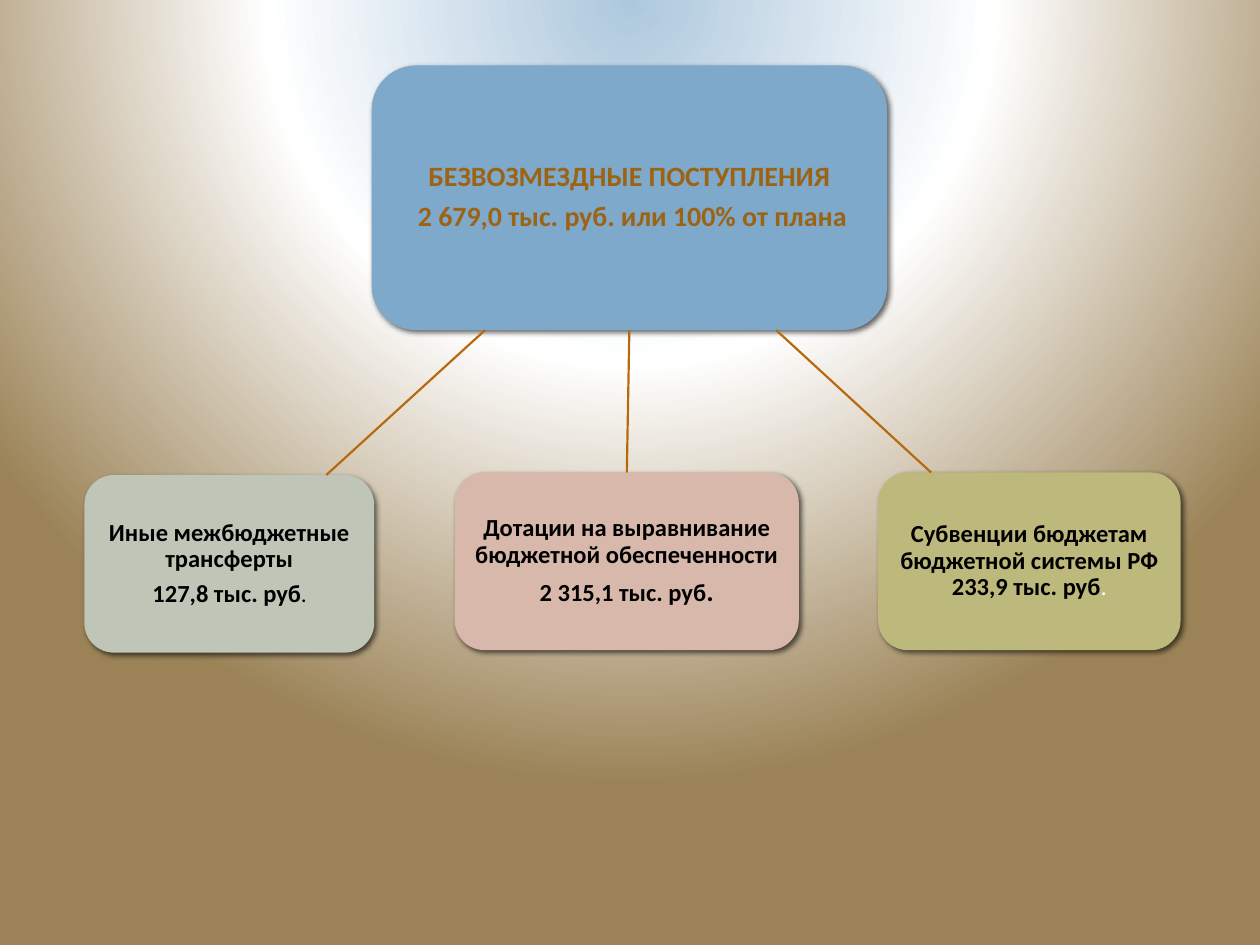
"""Build a slide that splits budget grants into three kinds of transfer."""
from dataclasses import dataclass
from typing import Any, Optional

import pptx
import pptx.dml.color
import pptx.enum.shapes
import pptx.enum.text
import pptx.oxml
import pptx.oxml.ns
import pptx.util
from lxml import etree

Inches = pptx.util.Inches
Pt = pptx.util.Pt
qn = pptx.oxml.ns.qn


@dataclass(frozen=True)
class Theme:
    font: str = "Calibri"
    heading: str = "9D6314"
    ink: str = "000000"
    light: str = "FFFFFF"
    line: str = "B7690E"
    total: str = "7EA9CA"
    transfers: str = "BFC6B8"
    grants: str = "D7B8AB"
    subventions: str = "BDB87B"
    backdrop: tuple = ((0, "ADC8DD"), (46, "FFFFFF"), (100, "9B8357"))
    heading_size: float = 16
    body_size: float = 14
    small_size: float = 10.5
    line_width: float = 1.25


THEME = Theme()


@dataclass(frozen=True)
class Run:
    text: str
    size: float = THEME.body_size
    color: str = THEME.ink
    bold: bool = True


@dataclass(frozen=True)
class Box:
    left: float
    top: float
    width: float
    height: float
    fill: str
    paragraphs: tuple


@dataclass(frozen=True)
class Branch:
    box: Box
    start_x: Optional[float] = None
    end_x: Optional[float] = None


def heading(text: str) -> Run:
    """Return a run in the heading style."""
    return Run(text, THEME.heading_size, THEME.heading)


TOTAL = Box(2.95, 0.52, 4.09, 2.1, THEME.total, (
    (heading("БЕЗВОЗМЕЗДНЫЕ ПОСТУПЛЕНИЯ"),),
    (heading(" 2 679,0 тыс. руб. или 100% от плана"),),
))
BRANCHES = (
    Branch(Box(3.61, 3.75, 2.73, 1.41, THEME.grants, (
        (Run("Дотации на выравнивание бюджетной обеспеченности"),),
        (Run("2 315,1 тыс. руб"), Run(".", THEME.heading_size)),
    ))),
    Branch(Box(6.97, 3.75, 2.4, 1.41, THEME.subventions, (
        (Run("Субвенции бюджетам бюджетной системы РФ 233,9 тыс. руб"),
         Run(".", color=THEME.light, bold=False)),
    )), 6.16, 7.39),
    Branch(Box(0.67, 3.77, 2.3, 1.41, THEME.transfers, (
        (Run("Иные межбюджетные трансферты"),),
        (Run("127,8 тыс. руб"), Run(".", THEME.small_size)),
    )), 3.85, 2.59),
)


def rgb(value: str) -> pptx.dml.color.RGBColor:
    """Return the colour for a hex string."""
    return pptx.dml.color.RGBColor.from_string(value)


def apply(target: Any, formats: dict) -> None:
    """Set each format value on the target."""
    for name, value in formats.items():
        setattr(target, name, value)


def paint_background(s: Any) -> None:
    """Give the slide its radial gradient."""
    stops = "".join(
        f'<a:gs pos="{pos * 1000}"><a:srgbClr val="{color}"/></a:gs>'
        for pos, color in THEME.backdrop)
    bg = pptx.oxml.parse_xml(
        f'<p:bg {pptx.oxml.ns.nsdecls("p", "a")}><p:bgPr>'
        f'<a:gradFill rotWithShape="1"><a:gsLst>{stops}</a:gsLst>'
        '<a:path path="circle">'
        '<a:fillToRect l="50000" t="-80000" r="50000" b="180000"/></a:path>'
        '</a:gradFill><a:effectLst/></p:bgPr></p:bg>')
    s.element.cSld.insert(0, bg)


def add_shadow(shape: Any) -> None:
    """Give the shape a soft shadow to the lower right."""
    shape.shadow.inherit = False
    effects = shape.element.spPr.find(qn("a:effectLst"))
    shadow = etree.SubElement(
        effects, qn("a:outerShdw"), blurRad=str(Pt(3)), dist=str(Pt(2)),
        dir="2700000", algn="ctr", rotWithShape="0")
    color = etree.SubElement(shadow, qn("a:srgbClr"), val=THEME.ink)
    etree.SubElement(color, qn("a:alpha"), val="60000")


def write_paragraph(p: Any, runs: tuple) -> None:
    """Fill a centred paragraph with formatted runs."""
    apply(p, {"alignment": pptx.enum.text.PP_ALIGN.CENTER, "line_spacing": 0.9})
    after = etree.SubElement(p._p.get_or_add_pPr(), qn("a:spcAft"))
    etree.SubElement(after, qn("a:spcPct"), val="35000")
    for run in runs:
        r = p.add_run()
        r.text = run.text
        apply(r.font, {"name": THEME.font, "size": Pt(run.size), "bold": run.bold})
        r.font.color.rgb = rgb(run.color)


def draw_box(s: Any, box: Box) -> Any:
    """Draw a rounded box with its text."""
    sp = s.shapes.add_shape(
        pptx.enum.shapes.MSO_SHAPE.ROUNDED_RECTANGLE,
        *map(Inches, (box.left, box.top, box.width, box.height)))
    sp.fill.solid()
    sp.fill.fore_color.rgb = rgb(box.fill)
    sp.line.fill.background()
    add_shadow(sp)
    tf = sp.text_frame
    apply(tf, {"word_wrap": True,
               "vertical_anchor": pptx.enum.text.MSO_ANCHOR.MIDDLE})
    apply(tf, {f"margin_{side}": Inches(0.04)
               for side in ("left", "top", "right", "bottom")})
    for i, runs in enumerate(box.paragraphs):
        write_paragraph(tf.add_paragraph() if i else tf.paragraphs[0], runs)
    return sp


def draw_branch(s: Any, total: Any, branch: Branch) -> None:
    """Draw a box and the line that leads to it from the total."""
    sp = draw_box(s, branch.box)
    line = s.shapes.add_connector(
        pptx.enum.shapes.MSO_CONNECTOR.STRAIGHT,
        Inches(branch.start_x or 0), Inches(TOTAL.top + TOTAL.height),
        Inches(branch.end_x or 0), Inches(branch.box.top))
    if branch.start_x is None:
        line.begin_connect(total, 2)
        line.end_connect(sp, 0)
    line.line.color.rgb = rgb(THEME.line)
    line.line.width = Pt(THEME.line_width)
    etree.SubElement(line._element.spPr, qn("a:effectLst"))


def main() -> None:
    """Build and save the presentation."""
    prs = pptx.Presentation()
    apply(prs, {"slide_width": Inches(10), "slide_height": Inches(7.5)})
    s = prs.slides.add_slide(prs.slide_layouts[6])
    paint_background(s)
    total = draw_box(s, TOTAL)
    for branch in BRANCHES:
        draw_branch(s, total, branch)
    prs.save("out.pptx")


if __name__ == "__main__":
    main()
